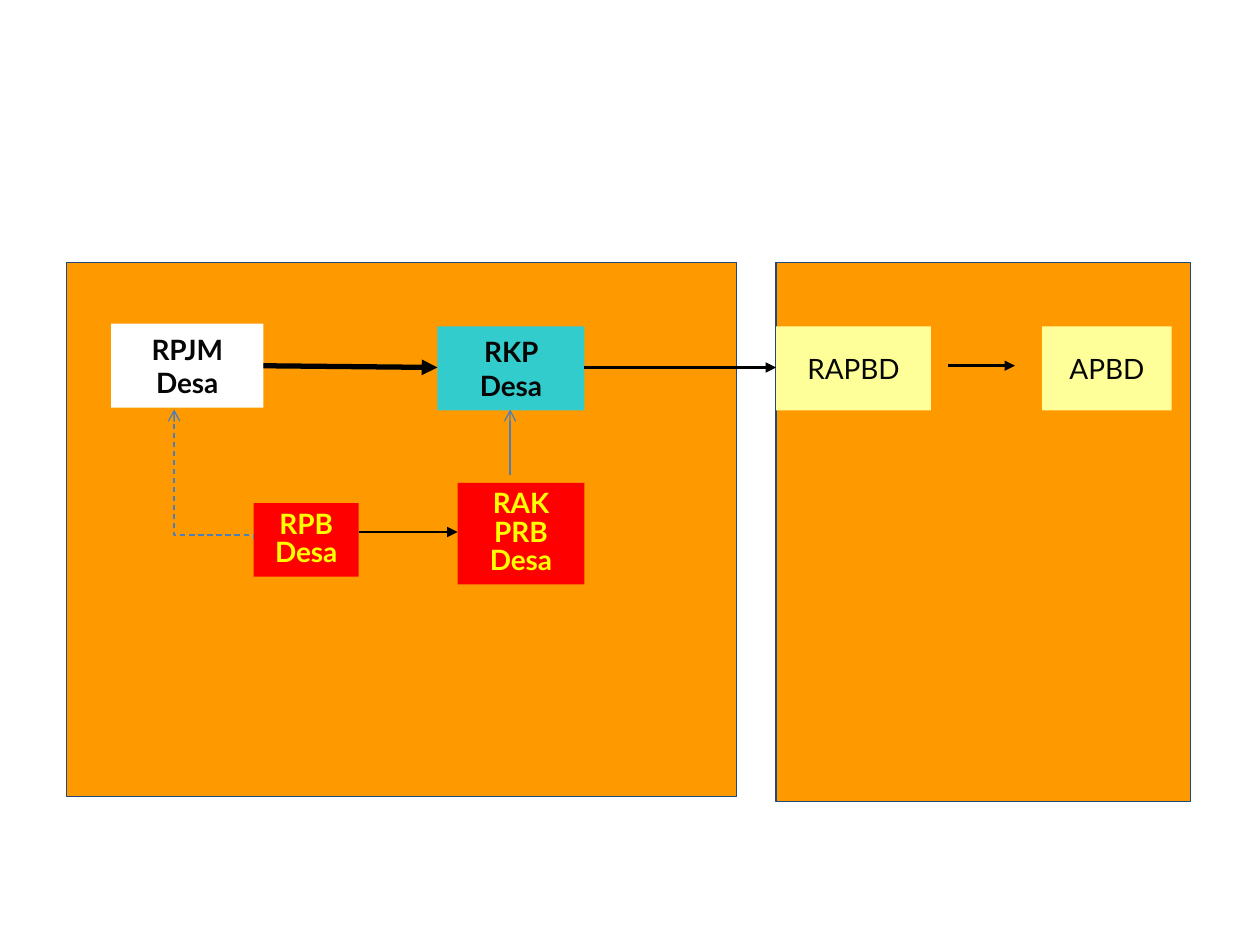
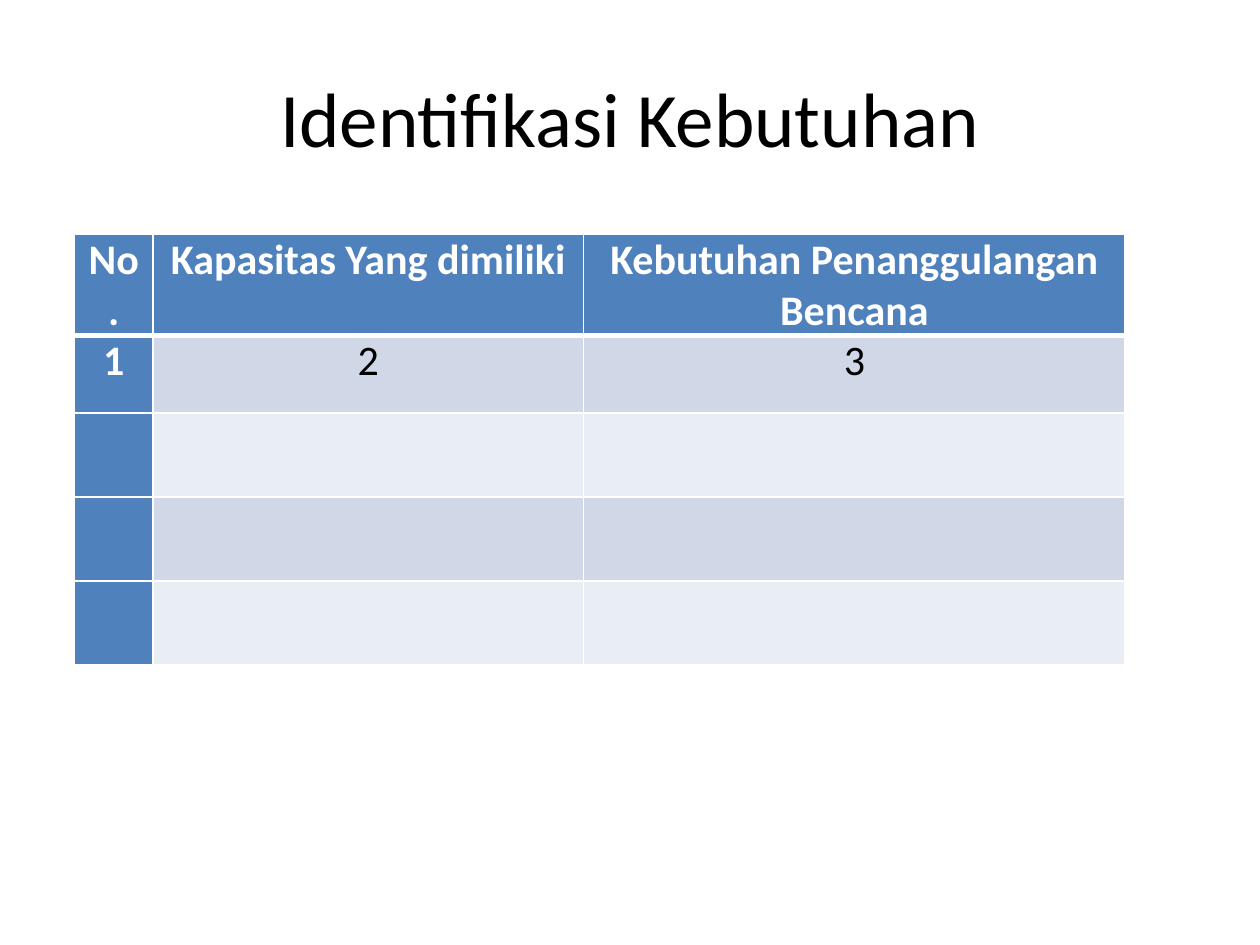
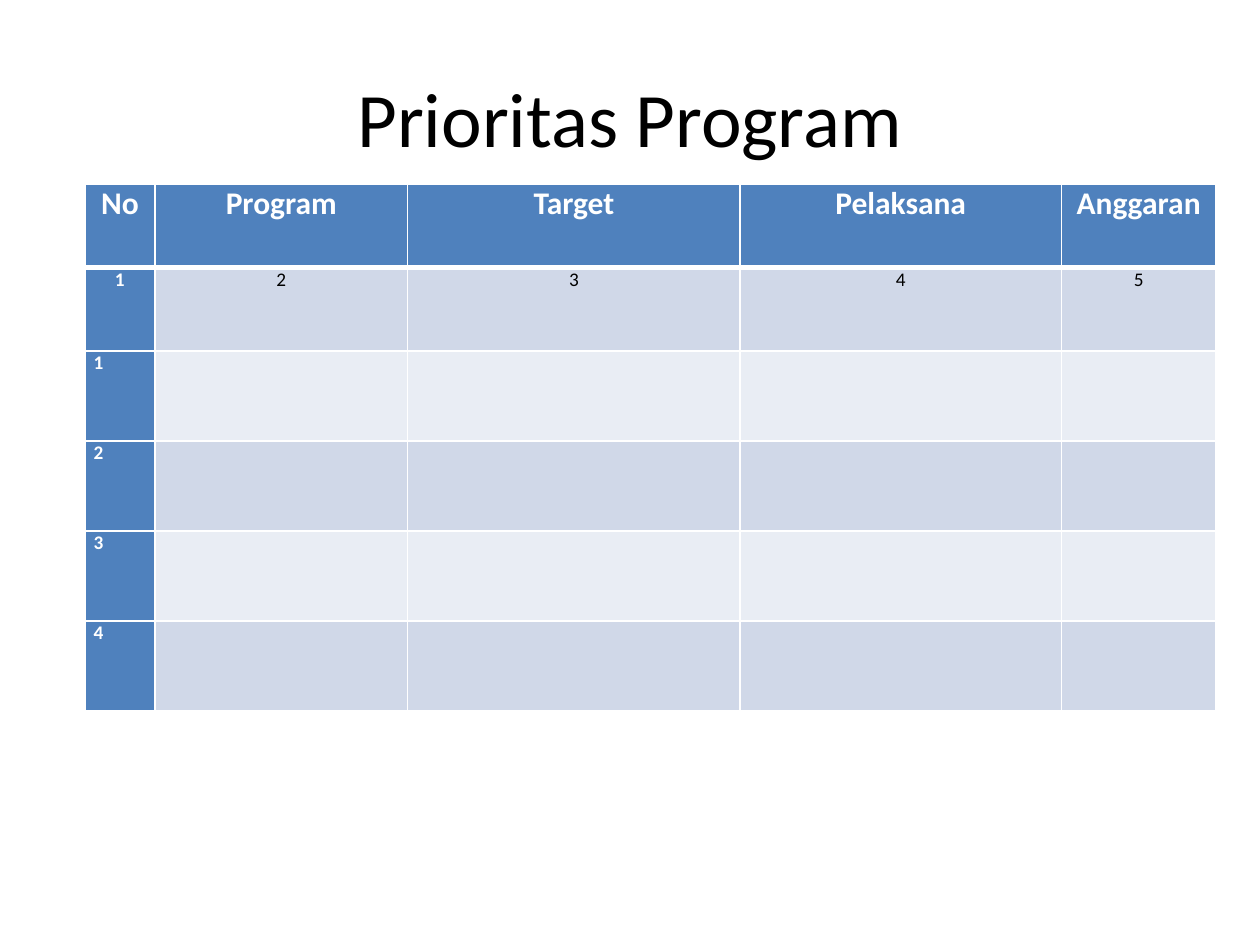
from lxml.etree import SubElement
from pptx import Presentation
from pptx.dml.color import RGBColor
from pptx.enum.dml import MSO_LINE
from pptx.enum.shapes import MSO_CONNECTOR, MSO_SHAPE
from pptx.enum.text import MSO_ANCHOR, PP_ALIGN
from pptx.oxml.ns import qn
from pptx.util import Pt

BLACK = RGBColor(0x00, 0x00, 0x00)
INK = RGBColor(0x06, 0x06, 0x06)
WHITE = RGBColor(0xFF, 0xFF, 0xFF)
ORANGE = RGBColor(0xFF, 0x99, 0x00)
NAVY = RGBColor(0x1F, 0x49, 0x7D)
TEAL = RGBColor(0x33, 0xCC, 0xCC)
CREAM = RGBColor(0xFF, 0xFF, 0x99)
RED = RGBColor(0xFF, 0x00, 0x00)
YELLOW = RGBColor(0xFF, 0xFF, 0x00)
LINK_BLUE = RGBColor(0x4B, 0x7E, 0xBC)
HEADER_BLUE = RGBColor(0x4F, 0x81, 0xBD)
BAND_DARK = RGBColor(0xD0, 0xD8, 0xE8)
BAND_LIGHT = RGBColor(0xE9, 0xED, 0xF4)

TITLE_FONT = {"name": "Calibri", "size": Pt(44), "bold": False}
PLAN_FONT = {"name": "Lato", "size": Pt(16), "bold": True}
BUDGET_FONT = {**PLAN_FONT, "bold": False}
CENTERED = {"alignment": PP_ALIGN.CENTER}
TIGHT = {**CENTERED, "line_spacing": 0.85}
SPACED = {**CENTERED, "space_before": Pt(6)}
CELL_CENTERED = {**CENTERED, "space_after": Pt(6)}
CELL_LEFT = {**CELL_CENTERED, "alignment": PP_ALIGN.LEFT}
CELL_MARGINS = {"margin_left": Pt(5), "margin_right": Pt(5), "margin_top": 0, "margin_bottom": 0}


def apply_format(target, values):
    """Set each format value on the target."""
    for attribute, value in values.items():
        setattr(target, attribute, value)


def write(frame, text, font, color, layout):
    """Write one formatted paragraph into a text frame."""
    paragraph = frame.paragraphs[0]
    apply_format(paragraph, layout)
    run = paragraph.add_run()
    run.text = text
    apply_format(run.font, font)
    run.font.color.rgb = color


def add_title(slide, text):
    """Add the centred slide title."""
    title = slide.shapes.add_textbox(Pt(36), Pt(21.6), Pt(648), Pt(90))
    apply_format(title.text_frame, {"word_wrap": True, "vertical_anchor": MSO_ANCHOR.MIDDLE})
    write(title.text_frame, text, TITLE_FONT, BLACK, CENTERED)


def add_block(slide, area, fill):
    """Add a filled rectangle without outline or shadow."""
    block = slide.shapes.add_shape(MSO_SHAPE.RECTANGLE, *map(Pt, area))
    block.shadow.inherit = False
    block.fill.solid()
    block.fill.fore_color.rgb = fill
    block.line.fill.background()
    return block


def add_panel(slide, area):
    """Add an outlined orange background panel."""
    outline = add_block(slide, area, ORANGE).line
    outline.color.rgb = NAVY
    outline.width = Pt(0.75)


def add_document(slide, text, area, fill, color=INK, font=PLAN_FONT, layout=CENTERED):
    """Add a labelled planning document."""
    document = add_block(slide, area, fill)
    document.text_frame.vertical_anchor = MSO_ANCHOR.MIDDLE
    write(document.text_frame, text, font, color, layout)


def finish_arrow(arrow, color, width, head, dash=None):
    """Style a connector and give it an arrowhead."""
    arrow.line.color.rgb = color
    apply_format(arrow.line, {"width": Pt(width), "dash_style": dash})
    properties = arrow._element.spPr
    SubElement(properties.find(qn("a:ln")), qn("a:tailEnd"), type=head)
    SubElement(properties, qn("a:effectLst"))


def add_arrow(slide, ends, color=BLACK, width=1.5, head="triangle"):
    """Add a straight arrow."""
    arrow = slide.shapes.add_connector(MSO_CONNECTOR.STRAIGHT, *map(Pt, ends))
    finish_arrow(arrow, color, width, head)


def add_feedback(slide, start_x, start_y, end_x, end_y):
    """Add a dashed elbow arrow that runs left and then up."""
    middle_x, middle_y = (start_x + end_x) / 2, (start_y + end_y) / 2
    half_rise, half_run = (start_y - end_y) / 2, (start_x - end_x) / 2
    ends = (middle_x - half_rise, middle_y + half_run, middle_x + half_rise, middle_y - half_run)
    feedback = slide.shapes.add_connector(MSO_CONNECTOR.ELBOW, *map(Pt, ends))
    properties = feedback._element.spPr
    properties.find(qn("a:xfrm")).set("rot", str(270 * 60000))
    adjustments = properties.find(qn("a:prstGeom")).find(qn("a:avLst"))
    SubElement(adjustments, qn("a:gd"), name="adj1", fmla="val 3100")
    finish_arrow(feedback, LINK_BLUE, 0.75, "arrow", MSO_LINE.DASH)


def add_borders(cell, top, bottom):
    """Draw white borders around a cell."""
    properties = cell._tc.get_or_add_tcPr()
    for side, width in {"L": 1, "R": 1, "T": top, "B": bottom}.items():
        border = SubElement(properties, qn(f"a:ln{side}"), w=str(Pt(width)))
        fill = SubElement(border, qn("a:solidFill"))
        SubElement(fill, qn("a:srgbClr"), val=str(WHITE))


def add_grid(slide, corner, widths, heights, rows, header_size, body_size):
    """Add a banded table with a coloured header row and first column."""
    frame = slide.shapes.add_table(
        len(heights), len(widths), *map(Pt, (*corner, sum(widths), sum(heights))))
    table = frame.table
    table.horz_banding = False
    for column, width in zip(table.columns, widths):
        column.width = Pt(width)
    for r, height in enumerate(heights):
        table.rows[r].height = Pt(height)
        labels = rows[r] if r < len(rows) else []
        for c in range(len(widths)):
            cell = table.cell(r, c)
            heading = r == 0 or c == 0
            apply_format(cell, CELL_MARGINS)
            add_borders(cell, 3 if r == 1 else 1, 3 if r == 0 else 1)
            cell.fill.solid()
            cell.fill.fore_color.rgb = HEADER_BLUE if heading else (BAND_LIGHT, BAND_DARK)[r % 2]
            if c < len(labels):
                size = header_size if r == 0 else body_size
                font = {"name": "Calibri", "size": Pt(size), "bold": heading}
                write(cell.text_frame, labels[c], font, WHITE if heading else BLACK,
                      CELL_CENTERED if r < 2 else CELL_LEFT)


def build_planning(slide):
    """Show how village plans lead to the budget."""
    add_panel(slide, (443.5, 150, 237, 308))
    add_panel(slide, (38, 150, 383, 305))
    add_document(slide, "RPJM Desa", (63.5, 185, 87, 48), WHITE)
    add_document(slide, "RKP Desa", (250, 186.5, 84, 48), TEAL)
    for text, left, width in (("RAPBD", 443.5, 88.5), ("APBD", 595.5, 74)):
        add_document(slide, text, (left, 186.5, width, 48), CREAM, font=BUDGET_FONT, layout=SPACED)
    for text, area in (("RPB Desa", (145, 287.5, 60, 42)),
                       ("RAK PRB Desa", (261.5, 276, 72.5, 58))):
        add_document(slide, text, area, RED, YELLOW, layout=TIGHT)
    add_arrow(slide, (150.5, 209, 250, 210), width=3)
    for ends in ((205, 304, 261.5, 304), (334, 210, 443.5, 210), (542, 209, 580, 209)):
        add_arrow(slide, ends)
    add_feedback(slide, 145, 308, 99.5, 234)
    add_arrow(slide, (291.5, 271.5, 291.5, 234), LINK_BLUE, 0.75, "arrow")


def build_needs(slide):
    """Show the table for identifying needs."""
    add_title(slide, "Identifikasi Kebutuhan")
    rows = [["No.", "Kapasitas Yang dimiliki", "Kebutuhan Penanggulangan Bencana"],
            ["1", "2", "3"]]
    add_grid(slide, (42.5, 134), (45, 246, 309.5), (34, 44.5, 48, 48, 48), rows, 24, 24)


def build_priorities(slide):
    """Show the table of programme priorities."""
    add_title(slide, "Prioritas Program")
    rows = [["No", "Program", "Target", "Pelaksana", "Anggaran"],
            ["1", "2", "3", "4", "5"], ["1"], ["2"], ["3"], ["4"]]
    add_grid(slide, (48.5, 105.5), (40, 144.5, 190, 183.5, 88.5),
             (47.5, 47.5, 51.5, 51.5, 51.5, 51.5), rows, 18, 11)


def main():
    """Build and save the presentation."""
    presentation = Presentation()
    apply_format(presentation, {"slide_width": Pt(720), "slide_height": Pt(540)})
    for build in (build_planning, build_needs, build_priorities):
        build(presentation.slides.add_slide(presentation.slide_layouts[6]))
    presentation.save("out.pptx")


if __name__ == "__main__":
    main()
